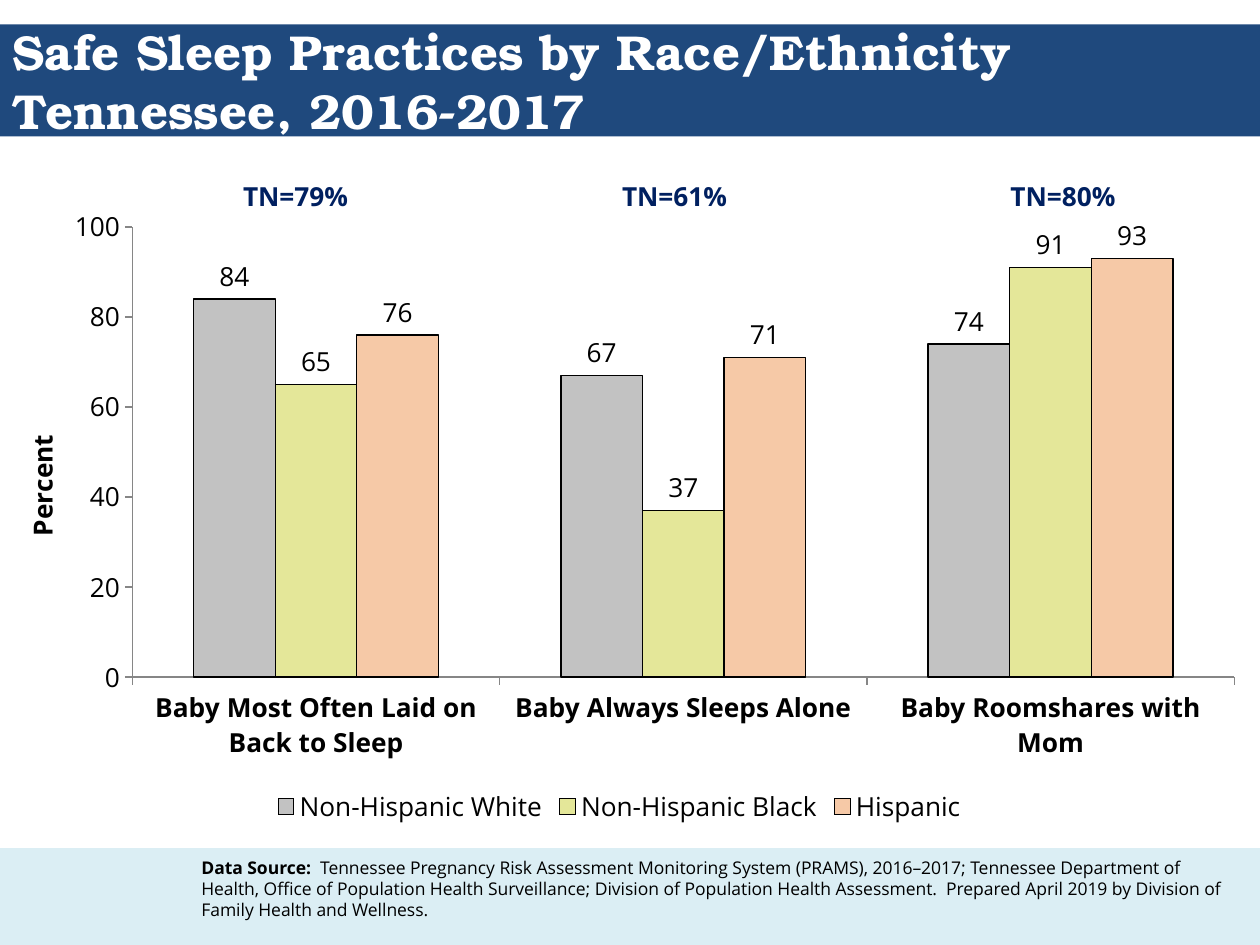
from lxml import etree
from pptx import Presentation
from pptx import util as u
from pptx.chart import data as chart_data
from pptx.dml import color
from pptx.enum import chart as charts, shapes, text
from pptx.oxml import ns

COLOURS = {
    "navy": "1F497D", "pale": "DBEEF4", "label": "002060", "white": "FFFFFF",
    "black": "000000", "axis": "868686",
}
SERIES = [
    ("Non-Hispanic White", (84, 67, 74), "C2C2C2"),
    ("Non-Hispanic Black", (65, 37, 91), "E4E799"),
    ("Hispanic", (76, 71, 93), "F6C9A7"),
]
CATEGORIES = [
    "Baby Most Often Laid on Back to Sleep",
    "Baby Always Sleeps Alone",
    "Baby Roomshares with Mom",
]
STATE_LABELS = [("TN=79%", 4.65), ("TN=61%", 12.29), ("TN=80%", 20.12)]
BODY_FONT = "Open Sans"


def rgb(value):
    """Turn a hex string into a colour."""
    return color.RGBColor.from_string(value)


def style_font(font, size, colour=COLOURS["black"], bold=False, name=BODY_FONT):
    """Give a font its face, size, weight and colour."""
    font.name = name
    font.size = u.Pt(size)
    font.bold = bold
    font.color.rgb = rgb(colour)


def add_band(slide, box, colour):
    """Add a plain full-width band and return it."""
    band = slide.shapes.add_shape(shapes.MSO_SHAPE.RECTANGLE, *map(u.Cm, box))
    band.shadow.inherit = False
    band.fill.solid()
    band.fill.fore_color.rgb = rgb(colour)
    band.line.fill.background()
    return band


def add_header(slide, box):
    """Place the title over its navy band."""
    band = add_band(slide, box, COLOURS["navy"])
    title = slide.shapes.title
    title.element.addprevious(band.element)
    title.left, title.top, title.width, title.height = map(u.Cm, box)
    frame = title.text_frame
    frame.text = "Safe Sleep Practices by Race/Ethnicity\vTennessee, 2016-2017"
    frame.vertical_anchor = text.MSO_ANCHOR.MIDDLE
    frame.auto_size = text.MSO_AUTO_SIZE.NONE
    paragraph = frame.paragraphs[0]
    paragraph.alignment = text.PP_ALIGN.LEFT
    for run in paragraph.runs:
        style_font(run.font, 28, COLOURS["white"], True, "TeX Gyre Bonum")


def add_text(slide, box, parts, size, colour):
    """Add a wrapped text box made of (wording, bold) parts."""
    shape = slide.shapes.add_textbox(*map(u.Cm, box))
    shape.text_frame.word_wrap = True
    paragraph = shape.text_frame.paragraphs[0]
    for wording, bold in parts:
        run = paragraph.add_run()
        run.text = wording
        style_font(run.font, size, colour, bold)


def add_footer(slide, box):
    """Place the data source note on its pale band."""
    left, top, width, height = box
    add_band(slide, box, COLOURS["pale"])
    parts = [
        ("Data Source:  ", True),
        ("Tennessee Pregnancy Risk Assessment Monitoring System (PRAMS), "
         "2016–2017; Tennessee Department of Health, Office of Population Health "
         "Surveillance; Division of Population Health Assessment.  Prepared April "
         "2019 by Division of Family Health and Wellness.", False),
    ]
    note_box = (left + 3.81, top + 0.05, width - 4.24, height - 0.41)
    add_text(slide, note_box, parts, 10, COLOURS["black"])


def set_layout(parent, following, **fractions):
    """Fix the position of a chart part, as fractions of the chart."""
    for old in parent.findall(ns.qn("c:layout")):
        parent.remove(old)
    layout = etree.Element(ns.qn("c:layout"))
    manual = etree.SubElement(layout, ns.qn("c:manualLayout"))
    if "w" in fractions:
        etree.SubElement(manual, ns.qn("c:layoutTarget")).set("val", "inner")
    for key in ("x", "y"):
        etree.SubElement(manual, ns.qn(f"c:{key}Mode")).set("val", "edge")
    for key, value in fractions.items():
        etree.SubElement(manual, ns.qn(f"c:{key}")).set("val", str(value))
    parent.find(ns.qn(following)).addprevious(layout)


def format_axes(chart):
    """Style the category and percent axes."""
    category, value = chart.category_axis, chart.value_axis
    for axis, bold in ((category, True), (value, False)):
        style_font(axis.tick_labels.font, 15, bold=bold)
        axis.has_major_gridlines = False
        axis.major_tick_mark = charts.XL_TICK_MARK.OUTSIDE
        axis.minor_tick_mark = charts.XL_TICK_MARK.NONE
        axis.format.line.color.rgb = rgb(COLOURS["axis"])
        axis.format.line.width = u.Pt(0.75)
    value.minimum_scale, value.maximum_scale, value.major_unit = 0, 100, 20
    value.tick_labels.number_format = "0"
    value.tick_labels.number_format_is_linked = False
    frame = value.axis_title.text_frame
    frame.text = "Percent"
    style_font(frame.paragraphs[0].runs[0].font, 15, bold=True)
    title = value.axis_title._element
    set_layout(title, "c:overlay", x=0.03, y=0.37)


def format_series(plot):
    """Colour the columns and label them with their values."""
    plot.gap_width = 150
    plot.overlap = 0
    plot.vary_by_categories = False
    for series, (_, _, colour) in zip(plot.series, SERIES):
        series.format.fill.solid()
        series.format.fill.fore_color.rgb = rgb(colour)
        series.format.line.color.rgb = rgb(COLOURS["black"])
        series.format.line.width = u.Pt(0.75)
        labels = series.data_labels
        labels.show_value = True
        labels.number_format = "#,##0"
        labels.number_format_is_linked = False
        labels.position = charts.XL_LABEL_POSITION.OUTSIDE_END
        style_font(labels.font, 15)


def add_practice_chart(slide, box):
    """Add the clustered column chart of sleep practices."""
    data = chart_data.CategoryChartData()
    data.categories = CATEGORIES
    for name, values, _ in SERIES:
        data.add_series(name, values)
    chart = slide.shapes.add_chart(
        charts.XL_CHART_TYPE.COLUMN_CLUSTERED, *map(u.Cm, box), data).chart
    style_font(chart.font, 10, name="Calibri")
    chart.has_title = False
    chart.has_legend = True
    chart.legend.position = charts.XL_LEGEND_POSITION.BOTTOM
    chart.legend.include_in_layout = False
    style_font(chart.legend.font, 15)
    format_axes(chart)
    format_series(chart.plots[0])
    plot_area = chart.element.find(".//" + ns.qn("c:plotArea"))
    set_layout(plot_area, "c:barChart", x=0.12, y=0.05, w=0.86, h=0.71)


def main():
    """Build and save the slide."""
    presentation = Presentation()
    presentation.slide_width, presentation.slide_height = u.Cm(25.4), u.Cm(19.05)
    slide = presentation.slides.add_slide(presentation.slide_layouts[5])
    add_header(slide, (0, 0.49, 25.4, 2.26))
    for wording, left in STATE_LABELS:
        add_text(slide, (left, 3.51, 3.18, 0.89), [(wording, True)], 15, COLOURS["label"])
    add_footer(slide, (0, 17.1, 25.4, 1.95))
    add_practice_chart(slide, (-0.43, 3.94, 25.83, 12.78))
    presentation.save("out.pptx")


if __name__ == "__main__":
    main()
